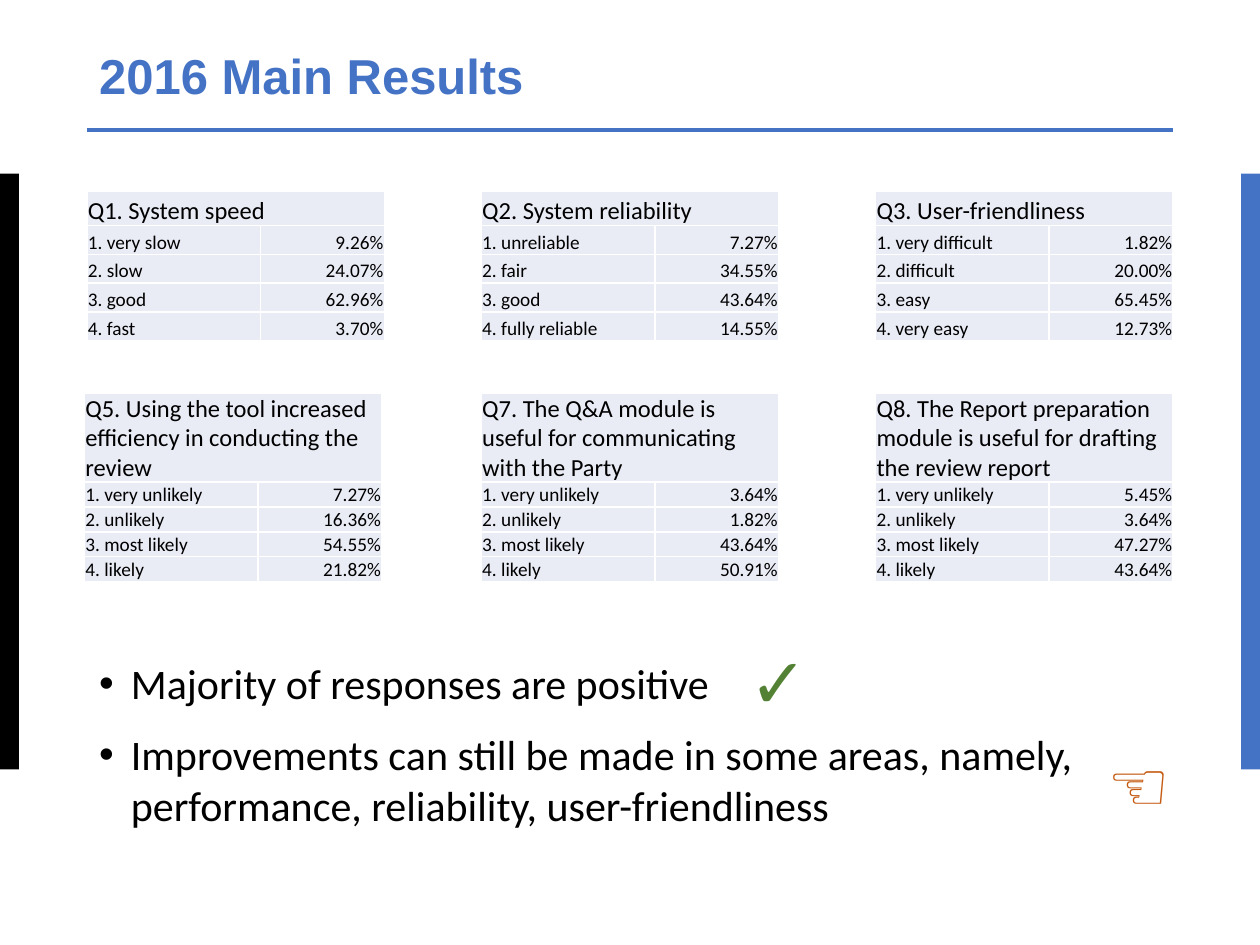
from lxml.etree import SubElement
from pptx import Presentation
from pptx.dml.color import RGBColor
from pptx.enum.shapes import MSO_CONNECTOR, MSO_SHAPE
from pptx.enum.text import MSO_ANCHOR, PP_ALIGN
from pptx.oxml.ns import qn
from pptx.util import Cm, Pt

COLORS = {"black": "000000", "blue": "4472C4", "white": "FFFFFF",
          "cell": "E9EBF5", "green": "548235", "orange": "C55A11"}

TITLE = "2016 Main Results"
LIKELIHOOD = ["1. very unlikely", "2. unlikely", "3. most likely", "4. likely"]
SPEED_AND_USE = [
    ("Q1. System speed",
     ["1. very slow", "2. slow", "3. good", "4. fast"],
     ["9.26%", "24.07%", "62.96%", "3.70%"]),
    ("Q2. System reliability",
     ["1. unreliable", "2. fair", "3. good", "4. fully reliable"],
     ["7.27%", "34.55%", "43.64%", "14.55%"]),
    ("Q3. User-friendliness",
     ["1. very difficult", "2. difficult", "3. easy", "4. very easy"],
     ["1.82%", "20.00%", "65.45%", "12.73%"]),
]
REVIEW_TOOL = [
    ("Q5. Using the tool increased efficiency in conducting the review",
     LIKELIHOOD, ["7.27%", "16.36%", "54.55%", "21.82%"]),
    ("Q7. The Q&A module is useful for communicating with the Party",
     LIKELIHOOD, ["3.64%", "1.82%", "43.64%", "50.91%"]),
    ("Q8. The Report preparation module is useful for drafting the review report",
     LIKELIHOOD, ["5.45%", "3.64%", "47.27%", "43.64%"]),
]
# Each band: questions, top, heading height, answer height, lefts (cm)
LEFT, PITCH = 1.75, 7.95
COLUMN_LEFTS = [LEFT + PITCH * i for i in range(3)]
BANDS = [
    (SPEED_AND_USE, 3.86, 0.69, 0.58, COLUMN_LEFTS),
    (REVIEW_TOOL, 7.92, 1.8, 0.5, [1.7] + COLUMN_LEFTS[1:]),
]
ANSWER_WIDTH, SHARE_WIDTH = 3.5, 2.5
CONCLUSIONS = [
    "Majority of responses are positive",
    "Improvements can still be made in some areas, namely, "
    "performance, reliability, user-friendliness",
]
CONTENT_WIDTH = 21.9
# Mark, left, top, width, colour, bold
MARKS = [("☜", 21.95, 14.83, 2.03, "orange", True),
         ("✓", 14.81, 12.75, 1.8, "green", False)]
SIDE_BARS = [(0, "black"), (25.02, "blue")]


def rgb(name):
    return RGBColor.from_string(COLORS[name])


def write(frame, paragraphs, size, font="Calibri", color="black", bold=False,
          align=PP_ALIGN.LEFT, bullet=None, gap=0, line_spacing=None):
    frame.word_wrap = True
    for i, text in enumerate(paragraphs):
        paragraph = frame.paragraphs[0] if i == 0 else frame.add_paragraph()
        paragraph.alignment = align
        if line_spacing:
            paragraph.line_spacing = line_spacing
        if i:
            paragraph.space_before = Pt(gap)
        paragraph.space_after = Pt(gap)
        if bullet:
            properties = paragraph._p.get_or_add_pPr()
            properties.set("marL", str(Cm(0.64)))
            properties.set("indent", str(-Cm(0.64)))
            SubElement(properties, qn("a:buFont"), typeface="Arial")
            SubElement(properties, qn("a:buChar"), char=bullet)
        run = paragraph.add_run()
        run.text = text
        run.font.size = Pt(size)
        run.font.name = font
        run.font.bold = bold
        run.font.color.rgb = rgb(color)


def add_text(slide, left, top, width, height, paragraphs,
             anchor=MSO_ANCHOR.TOP, **text_format):
    box = slide.shapes.add_textbox(Cm(left), Cm(top), Cm(width), Cm(height))
    box.text_frame.vertical_anchor = anchor
    write(box.text_frame, paragraphs, **text_format)


def style_cell(cell):
    cell.margin_left = cell.margin_right = cell.margin_top = Cm(0.02)
    cell.margin_bottom = 0
    cell.vertical_anchor = MSO_ANCHOR.BOTTOM
    properties = cell._tc.get_or_add_tcPr()
    for side in ("lnL", "lnR", "lnT", "lnB"):
        border = SubElement(properties, qn(f"a:{side}"), w=str(Pt(1)))
        fill = SubElement(border, qn("a:solidFill"))
        SubElement(fill, qn("a:srgbClr"), val=COLORS["white"])
    cell.fill.solid()
    cell.fill.fore_color.rgb = rgb("cell")


def add_question(slide, left, top, heading_height, answer_height,
                 question, answers, shares):
    frame = slide.shapes.add_table(
        len(answers) + 1, 2, Cm(left), Cm(top),
        Cm(ANSWER_WIDTH + SHARE_WIDTH),
        Cm(heading_height + answer_height * len(answers)))
    table = frame.table
    table.first_row = table.horz_banding = False
    for column, width in zip(table.columns, (ANSWER_WIDTH, SHARE_WIDTH)):
        column.width = Cm(width)
    heights = [heading_height] + [answer_height] * len(answers)
    for row, height in zip(table.rows, heights):
        row.height = Cm(height)
        for cell in row.cells:
            style_cell(cell)
    heading = table.cell(0, 0)
    heading.merge(table.cell(0, 1))
    write(heading.text_frame, [question], size=14)
    for row, (answer, share) in enumerate(zip(answers, shares), start=1):
        write(table.cell(row, 0).text_frame, [answer], size=11)
        write(table.cell(row, 1).text_frame, [share], size=11,
              align=PP_ALIGN.RIGHT)


def add_frame(slide):
    """Draw the rule under the title and the two side bars."""
    rule = slide.shapes.add_connector(
        MSO_CONNECTOR.STRAIGHT, Cm(LEFT), Cm(2.62),
        Cm(LEFT + CONTENT_WIDTH), Cm(2.62))
    rule.line.color.rgb = rgb("blue")
    rule.line.width = Pt(2.25)
    SubElement(rule._element.spPr, qn("a:effectLst"))
    for left, color in SIDE_BARS:
        bar = slide.shapes.add_shape(
            MSO_SHAPE.RECTANGLE, Cm(left), Cm(3.5), Cm(0.38), Cm(12.01))
        bar.shadow.inherit = False
        bar.fill.solid()
        bar.fill.fore_color.rgb = rgb(color)
        bar.line.fill.background()


def main():
    deck = Presentation()
    deck.slide_width, deck.slide_height = Cm(25.4), Cm(19.05)
    slide = deck.slides.add_slide(deck.slide_layouts[6])

    add_frame(slide)
    add_text(slide, LEFT, 0.58, CONTENT_WIDTH, 2, [TITLE],
             anchor=MSO_ANCHOR.MIDDLE, size=28, font="Arial", color="blue",
             bold=True, line_spacing=0.9)
    add_text(slide, LEFT, 13.13, CONTENT_WIDTH, 4.2, CONCLUSIONS,
             size=24, bullet="•", gap=6)
    for questions, top, heading_height, answer_height, lefts in BANDS:
        for left, question in zip(lefts, questions):
            add_question(slide, left, top, heading_height, answer_height,
                         *question)
    for mark, left, top, width, color, bold in MARKS:
        add_text(slide, left, top, width, 1.96, [mark], size=40, color=color,
                 bold=bold, align=PP_ALIGN.CENTER)

    deck.save("out.pptx")


if __name__ == "__main__":
    main()
